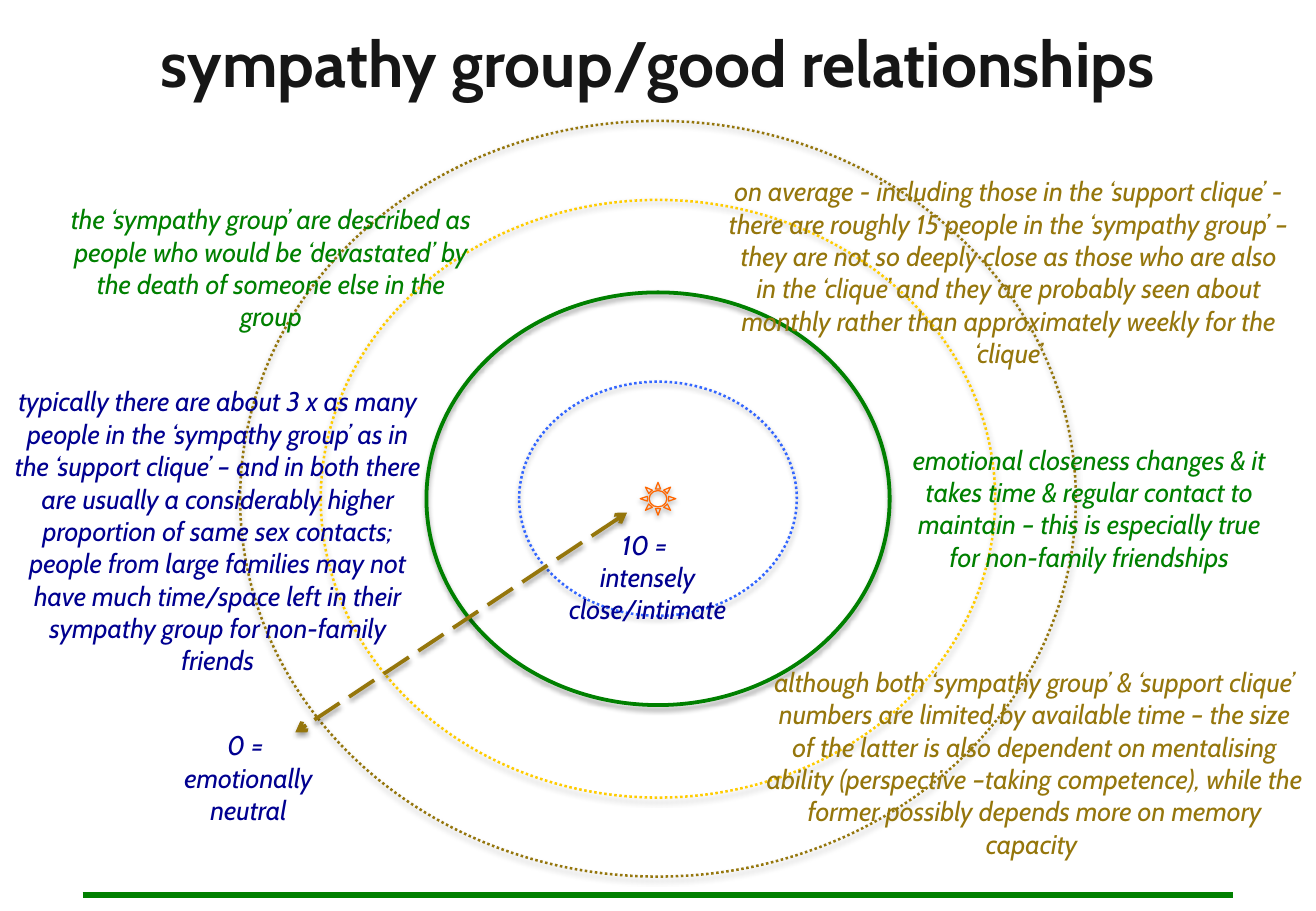
from dataclasses import dataclass
from typing import Optional

from lxml.etree import SubElement
from pptx import Presentation
from pptx.dml.color import RGBColor
from pptx.enum.dml import MSO_LINE_DASH_STYLE as Dash
from pptx.enum.shapes import MSO_CONNECTOR as Connector, MSO_SHAPE as Preset
from pptx.enum.text import MSO_ANCHOR as Anchor, PP_ALIGN as Align
from pptx.oxml.ns import qn
from pptx.util import Inches, Pt

COLORS = {
    "title": "161616",
    "green": "008000",
    "bronze": "95760C",
    "navy": "000090",
    "blue": "3366FF",
    "orange": "FF6600",
    "yellow": "FFCC00",
    "shadow": "000000",
}
FONT = "Cabin"
CENTER_X, CENTER_Y = 50, 54.75

presentation = Presentation()
presentation.slide_width = Inches(10.83)
presentation.slide_height = Inches(7.5)
slide = presentation.slides.add_slide(presentation.slide_layouts[6])


@dataclass
class Ring:
    width: float
    height: float
    color: str
    weight: float = 1.5
    dash: Optional[Dash] = Dash.ROUND_DOT
    preset: Preset = Preset.OVAL


@dataclass
class Note:
    left: float
    top: float
    width: float
    height: float
    color: str
    lines: list[str]


RINGS = [
    Ring(63.5, 82.95, "bronze"),
    Ring(21.1, 25.7, "blue"),
    Ring(2.7, 3.6, "orange", 0.75, None, Preset.SUN),
    Ring(35.2, 45.3, "green", 2.25, None),
    Ring(51.25, 65.6, "yellow"),
]

NOTES = [
    Note(4.25, 21.6, 32.7, 15.73, "green", [
        "the ‘sympathy group’ are described as people who would be "
        "‘devastated’ by the death of someone else in the group"]),
    Note(54.4, 18.53, 44.5, 22.93, "bronze", [
        "on average - including those in the ‘support clique’ - there are "
        "roughly 15 people in the ‘sympathy group’ – they are not so deeply "
        "close as those who are also in the ‘clique’ and they are probably "
        "seen about monthly rather than approximately weekly for the ‘clique’"]),
    Note(10.62, 79.33, 16.53, 12.13, "navy", ["0 = ", "emotionally neutral"]),
    Note(38.97, 57.33, 20.5, 12.13, "navy", ["10 = ", "intensely close/intimate"]),
    Note(57.25, 72.4, 42.75, 22.93, "bronze", [
        "although both ‘sympathy group’ & ‘support clique’ numbers are limited "
        "by available time – the size of the latter is also dependent on "
        "mentalising ability (perspective –taking competence), while the "
        "former possibly depends more on memory capacity "]),
    Note(0.2, 41.6, 32.7, 33.6, "navy", [
        "typically there are about 3 x as many people in the ‘sympathy group’ "
        "as in the ‘support clique’ – and in both there are usually a "
        "considerably higher proportion of same sex contacts; people from "
        "large families may not have much time/space left in their sympathy "
        "group for non-family friends"]),
    Note(67.5, 48, 30.56, 15.73, "green", [
        "emotional closeness changes & it takes time & regular contact to "
        "maintain – this is especially true for non-family friendships"]),
]


def across(percent: float) -> int:
    return round(presentation.slide_width * percent / 100)


def down(percent: float) -> int:
    return round(presentation.slide_height * percent / 100)


def rgb(name: str) -> RGBColor:
    return RGBColor.from_string(COLORS[name])


def style_line(line, color: str, weight: float, dash: Optional[Dash] = None) -> None:
    line.color.rgb = rgb(color)
    line.width = Pt(weight)
    if dash is not None:
        line.dash_style = dash


def add_effects(shape, opacity: int = 0, distance: float = 0) -> None:
    properties = shape._element.spPr
    for existing in properties.findall(qn("a:effectLst")):
        properties.remove(existing)
    effects = SubElement(properties, qn("a:effectLst"))
    if opacity:
        shadow = SubElement(effects, qn("a:outerShdw"), blurRad=str(Pt(3.1)),
                            dist=str(Pt(distance)), dir="5400000", rotWithShape="0")
        color = SubElement(shadow, qn("a:srgbClr"), val=COLORS["shadow"])
        SubElement(color, qn("a:alpha"), val=str(opacity * 1000))


def add_text(lines: list[str], *, left: float, top: float, width: float,
             height: float, color: str, size: float = 16, bold: bool = False,
             italic: bool = False, anchor: Anchor = Anchor.TOP) -> None:
    box = slide.shapes.add_textbox(across(left), down(top), across(width), down(height))
    frame = box.text_frame
    frame.word_wrap = True
    frame.vertical_anchor = anchor
    frame.text = "\n".join(lines)
    for paragraph in frame.paragraphs:
        paragraph.alignment = Align.CENTER
        font = paragraph.font
        font.name, font.size = FONT, Pt(size)
        font.bold, font.italic = bold, italic
        font.color.rgb = rgb(color)


def add_ring(ring: Ring) -> None:
    shape = slide.shapes.add_shape(
        ring.preset, across(CENTER_X - ring.width / 2), down(CENTER_Y - ring.height / 2),
        across(ring.width), down(ring.height))
    shape.shadow.inherit = False
    shape.fill.background()
    style_line(shape.line, ring.color, ring.weight, ring.dash)
    add_effects(shape, opacity=35, distance=1.8)


def add_line(start: tuple[float, float], end: tuple[float, float], color: str,
             weight: float, dash: Optional[Dash] = None):
    connector = slide.shapes.add_connector(
        Connector.STRAIGHT, across(start[0]), down(start[1]), across(end[0]), down(end[1]))
    style_line(connector.line, color, weight, dash)
    return connector


def main() -> None:
    add_text(["sympathy group/good relationships"], left=0, top=3, width=100,
             height=8.67, color="title", size=38, bold=True, anchor=Anchor.BOTTOM)
    for ring in RINGS:
        add_ring(ring)

    add_effects(add_line((6.28, 98.27), (93.72, 98.27), "green", 3.25))

    closeness = add_line((47.65, 56.27), (22.44, 80.4), "bronze", 2.25, Dash.LONG_DASH)
    outline = closeness.line._get_or_add_ln()
    for tip in ("a:headEnd", "a:tailEnd"):
        SubElement(outline, qn(tip), type="arrow")
    add_effects(closeness, opacity=38, distance=1.6)

    for note in NOTES:
        add_text(note.lines, left=note.left, top=note.top, width=note.width,
                 height=note.height, color=note.color, italic=True)
    presentation.save("out.pptx")


if __name__ == "__main__":
    main()
